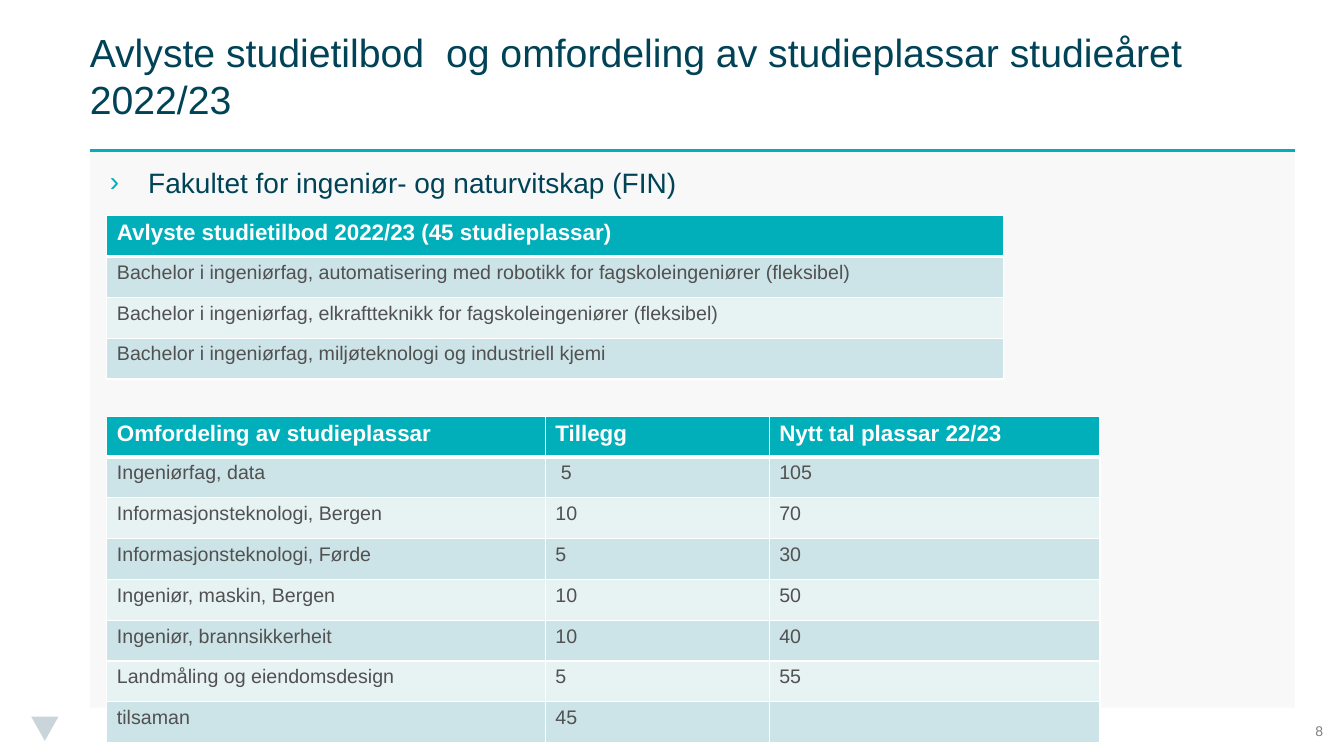
from lxml import etree
from pptx import Presentation, util as u
from pptx.dml.color import RGBColor
from pptx.enum import shapes, text
from pptx.oxml.ns import qn

# Content
TITLE = "Avlyste studietilbod  og omfordeling av studieplassar studieåret 2022/23"
FACULTY = "Fakultet for ingeniør- og naturvitskap (FIN)"
PAGE = "8"
CANCELLED = [
    ("Avlyste studietilbod 2022/23 (45 studieplassar)",),
    ("Bachelor i ingeniørfag, automatisering med robotikk for fagskoleingeniører (fleksibel)",),
    ("Bachelor i ingeniørfag, elkraftteknikk for fagskoleingeniører (fleksibel)",),
    ("Bachelor i ingeniørfag, miljøteknologi og industriell kjemi",),
]
REALLOCATED = [
    ("Omfordeling av studieplassar", "Tillegg", "Nytt tal plassar 22/23"),
    ("Ingeniørfag, data", " 5", "105"),
    ("Informasjonsteknologi, Bergen", "10", "70"),
    ("Informasjonsteknologi, Førde", "5", "30"),
    ("Ingeniør, maskin, Bergen", "10", "50"),
    ("Ingeniør, brannsikkerheit", "10", "40"),
    ("Landmåling og eiendomsdesign", "5", "55"),
    ("tilsaman", "45", ""),
]

# Look
FONT = "Arial"
TEAL = RGBColor(0x00, 0xAF, 0xBA)
NAVY = RGBColor(0x00, 0x43, 0x57)
PANEL = RGBColor(0xF2, 0xF2, 0xF2)
MARK = RGBColor(0xC9, 0xD5, 0xDA)
GREY = RGBColor(0x80, 0x80, 0x80)
CELL_TEXT = RGBColor(0x51, 0x51, 0x51)
WHITE = RGBColor(0xFF, 0xFF, 0xFF)
BANDS = (RGBColor(0xCC, 0xE3, 0xE7), RGBColor(0xE7, 0xF2, 0xF3))

# Grid, in inches
SLIDE_W, SLIDE_H = 13.33, 7.5
LEFT, RULE_Y, CONTENT_W, CONTENT_H = 0.89, 1.49, 11.95, 5.53
CORNER = 0.49
TABLE_LEFT = 1.06
ROW_H = 1.62 / len(CANCELLED)

deck = Presentation()
deck.slide_width, deck.slide_height = u.Inches(SLIDE_W), u.Inches(SLIDE_H)
slide = deck.slides.add_slide(deck.slide_layouts[6])


def inches(*lengths):
    return [u.Inches(length) for length in lengths]


def style(paragraph, size, color, bold=False):
    for run in paragraph.runs:
        run.font.name, run.font.size, run.font.bold = FONT, u.Pt(size), bold
        run.font.color.rgb = color


def add_plain(kind, box, color):
    shape = slide.shapes.add_shape(kind, *inches(*box))
    shape.shadow.inherit = False
    shape.fill.solid()
    shape.fill.fore_color.rgb = color
    shape.line.fill.background()
    return shape


def add_text(words, box, size, color, inset=0, anchor=text.MSO_ANCHOR.MIDDLE):
    frame = slide.shapes.add_textbox(*inches(*box)).text_frame
    frame.word_wrap = True
    frame.vertical_anchor = anchor
    frame.margin_left = frame.margin_right = u.Inches(inset)
    frame.margin_top = frame.margin_bottom = u.Inches(inset)
    frame.text = words
    style(frame.paragraphs[0], size, color)
    return frame.paragraphs[0]


def add_borders(cell, top, bottom):
    tc_pr = cell._tc.get_or_add_tcPr()
    sides = (("a:lnL", 1), ("a:lnR", 1), ("a:lnT", top), ("a:lnB", bottom))
    for place, (side, width) in enumerate(sides):
        line = etree.Element(qn(side), w=str(u.Pt(width)))
        fill = etree.SubElement(line, qn("a:solidFill"))
        etree.SubElement(fill, qn("a:srgbClr"), val=str(WHITE))
        tc_pr.insert(place, line)


def add_banded_table(rows, top, widths):
    box = inches(TABLE_LEFT, top, sum(widths), ROW_H * len(rows))
    table = slide.shapes.add_table(len(rows), len(widths), *box).table
    for column, width in zip(table.columns, widths):
        column.width = u.Inches(width)
    for r, row in enumerate(rows):
        header = r == 0
        for c, words in enumerate(row):
            cell = table.cell(r, c)
            cell.text = words
            cell.fill.solid()
            cell.fill.fore_color.rgb = TEAL if header else BANDS[(r - 1) % 2]
            style(cell.text_frame.paragraphs[0], 16 if header else 14,
                  WHITE if header else CELL_TEXT, header)
            add_borders(cell, 3 if r == 1 else 1, 3 if header else 1)


# Corner mark, half-transparent panel and rule
add_plain(shapes.MSO_SHAPE.FLOWCHART_MERGE, (0.31, 7.11, 0.27, 0.24), MARK)
panel = add_plain(shapes.MSO_SHAPE.RECTANGLE, (LEFT, RULE_Y, CONTENT_W, CONTENT_H), PANEL)
panel_color = panel._element.spPr.find(qn("a:solidFill"))[0]
etree.SubElement(panel_color, qn("a:alpha"), val="50000")
rule = slide.shapes.add_connector(
    shapes.MSO_CONNECTOR.STRAIGHT, *inches(LEFT, RULE_Y, LEFT + CONTENT_W, RULE_Y))
rule.line.color.rgb, rule.line.width = TEAL, u.Pt(2)
etree.SubElement(rule._element.spPr, qn("a:effectLst"))

# Title, faculty bullet and page number
add_text(TITLE, (LEFT, 0, CONTENT_W, RULE_Y), 28, NAVY)
faculty = add_text(FACULTY, (LEFT, 1.47, CONTENT_W, CONTENT_H), 20, NAVY,
                   0.2, text.MSO_ANCHOR.TOP)
bullet = faculty._p.get_or_add_pPr()
bullet.set("marL", str(u.Inches(0.38)))
bullet.set("indent", str(-u.Inches(0.38)))
bullet_color = etree.SubElement(bullet, qn("a:buClr"))
etree.SubElement(bullet_color, qn("a:srgbClr"), val=str(TEAL))
etree.SubElement(bullet, qn("a:buFont"), typeface=FONT)
etree.SubElement(bullet, qn("a:buChar"), char="›")
page = add_text(PAGE, (SLIDE_W - CORNER, SLIDE_H - CORNER, CORNER, CORNER), 10, GREY)
page.alignment = text.PP_ALIGN.CENTER

# Tables
add_banded_table(CANCELLED, 2.14, [8.89])
add_banded_table(REALLOCATED, 4.13, [4.35, 2.22, 3.28])

deck.save("out.pptx")
